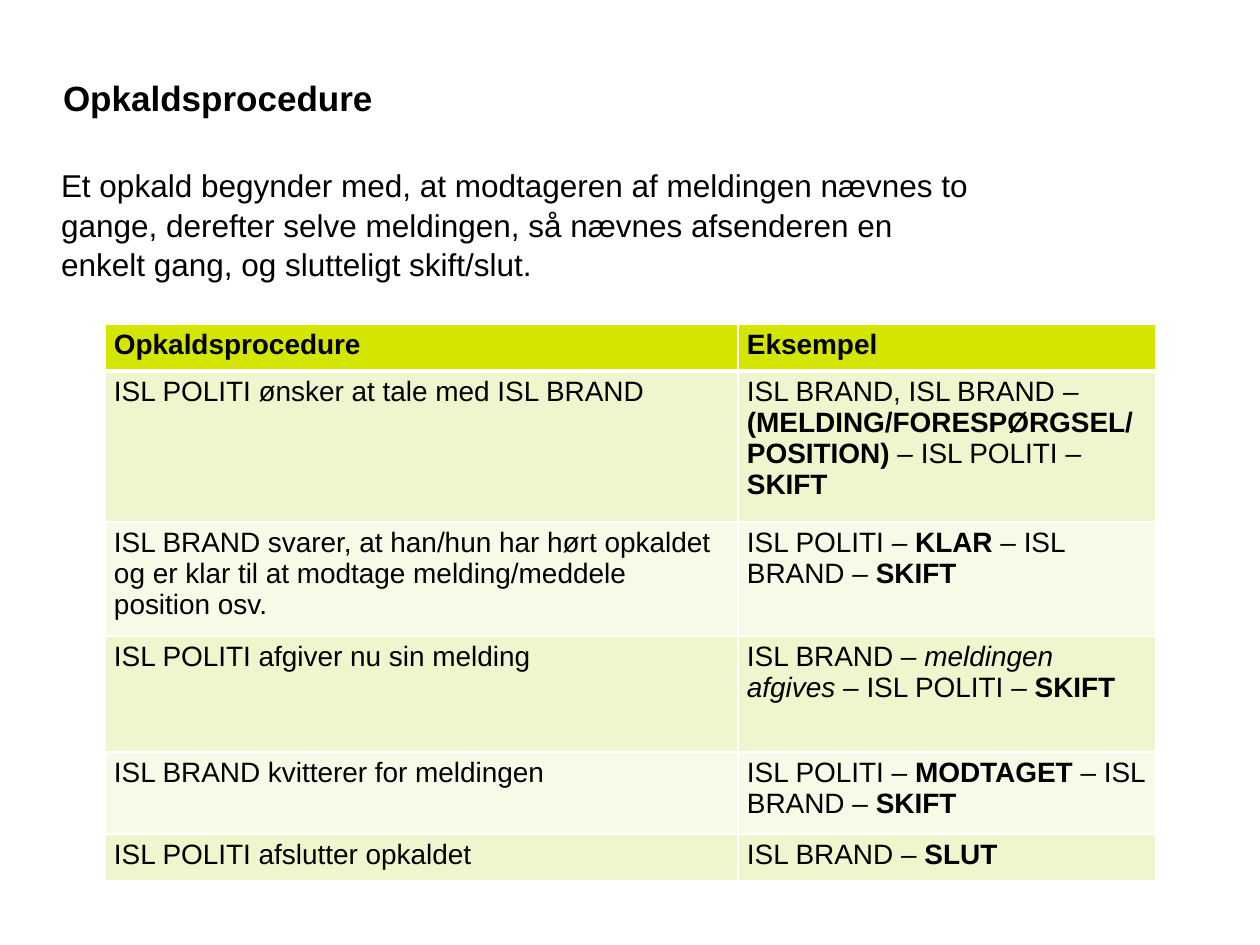
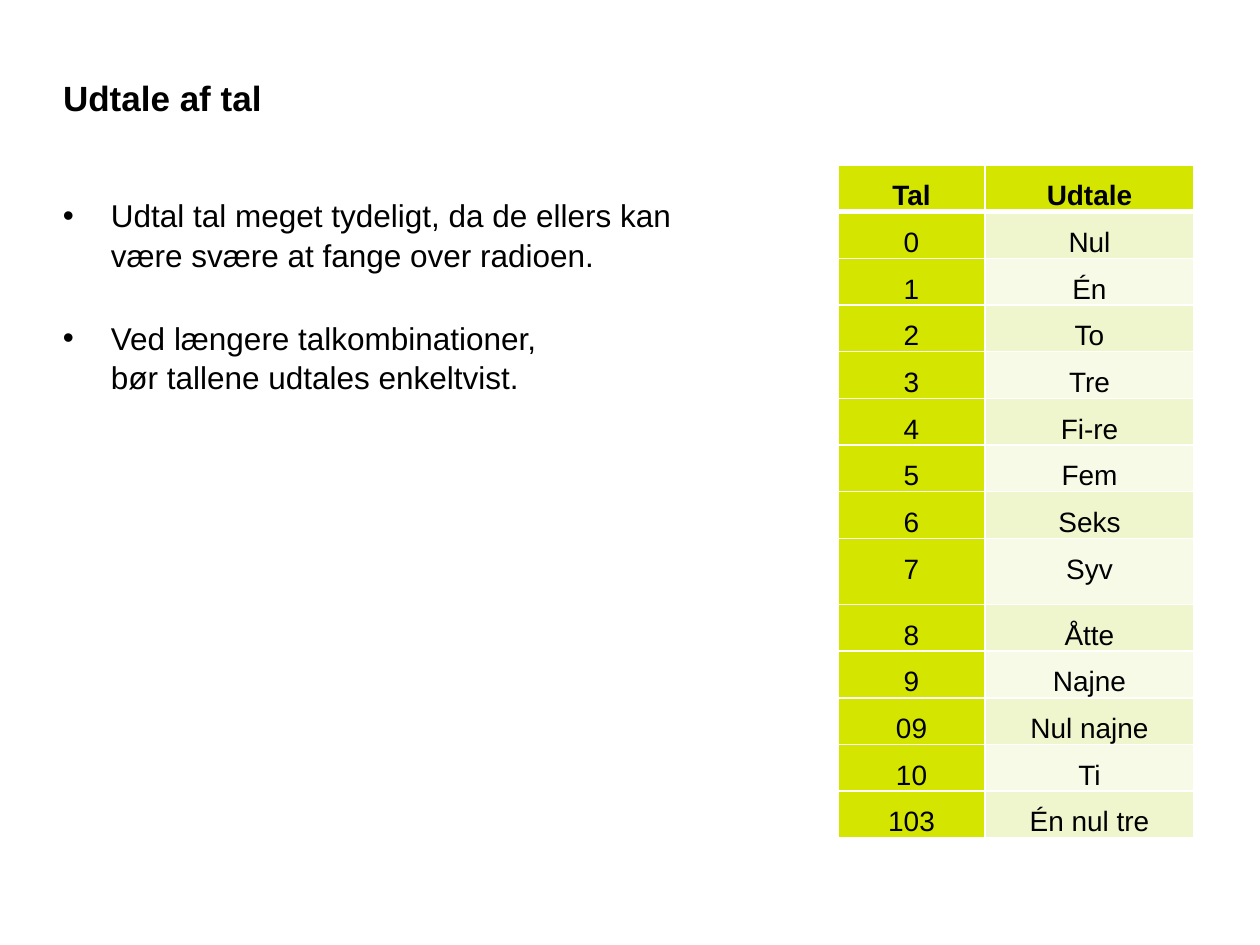
import dataclasses

import lxml.etree
import pptx
import pptx.dml.color
import pptx.enum.text
import pptx.oxml.ns
import pptx.util

ALIGN = pptx.enum.text.PP_ALIGN
SLIDE_W, SLIDE_H = 1260, 945
EMU_PER_PX = 914400 / 126


@dataclasses.dataclass(frozen=True)
class Theme:
    font: str = "Arial"
    ink: str = "000000"
    accent: str = "D4E600"
    band_dark: str = "EFF5CC"
    band_light: str = "F7FAE7"
    border: str = "FFFFFF"
    title_pt: int = 20
    body_pt: int = 18
    table_pt: int = 16
    border_pt: int = 1
    header_border_pt: int = 3
    body_spacing: float = 1.04
    bullet_gap_pt: int = 25


@dataclasses.dataclass(frozen=True)
class Box:
    left: int
    top: int
    width: int
    height: int


@dataclasses.dataclass(frozen=True)
class TableSpec:
    left: int
    top: int
    columns: list[int]
    row_heights: list[int]
    rows: list[tuple[str, str]]
    margin_x: int
    margin_y: int
    align: ALIGN = ALIGN.LEFT
    line_spacing: float = 1.0
    accent_first_column: bool = False


THEME = Theme()
TITLE_BOX = Box(63, 76, 915, 110)
BULLET_INDENT = 48

CALL_INTRO = (
    "Et opkald begynder med, at modtageren af meldingen nævnes to gange, derefter "
    "selve meldingen, så nævnes afsenderen en enkelt gang, og slutteligt skift/slut."
)
NUMBER_ADVICE = [
    "Udtal tal meget tydeligt, da de ellers kan\nvære svære at fange over radioen.",
    "Ved længere talkombinationer,\nbør tallene udtales enkeltvist.",
]
CALL_TABLE = TableSpec(
    left=105, top=324, columns=[633, 418],
    row_heights=[47, 151, 114, 116, 82, 47],
    rows=[
        ("Opkaldsprocedure", "Eksempel"),
        ("ISL POLITI ønsker at tale med ISL BRAND",
         "ISL BRAND, ISL BRAND _– _*(MELDING/FORESPØRGSEL/POSITION) *_– _"
         "ISL POLITI _– _*SKIFT*"),
        ("ISL BRAND svarer, at han/hun har hørt opkaldet og er klar til at modtage "
         "melding/meddele position osv.",
         "ISL POLITI _– _*KLAR *_– _ISL BRAND _– _*SKIFT*"),
        ("ISL POLITI afgiver nu sin melding",
         "ISL BRAND – _meldingen afgives – _ISL POLITI _– _*SKIFT*"),
        ("ISL BRAND kvitterer for meldingen",
         "ISL POLITI – *MODTAGET *_– _ISL BRAND _– _*SKIFT*"),
        ("ISL POLITI afslutter opkaldet", "ISL BRAND _– _*SLUT*"),
    ],
    margin_x=9, margin_y=5,
)
NUMBER_TABLE = TableSpec(
    left=838, top=165, columns=[147, 209],
    row_heights=[45] * 8 + [66] + [45] * 5,
    rows=[
        ("Tal", "Udtale"), ("0", "Nul"), ("1", "Én"), ("2", "To"), ("3", "Tre"),
        ("4", "Fi-re"), ("5", "Fem"), ("6", "Seks"), ("7", "Syv"), ("8", "Åtte"),
        ("9", "Najne"), ("09", "Nul najne"), ("10", "Ti"), ("103", "Én nul tre"),
    ],
    margin_x=8, margin_y=0, align=ALIGN.CENTER, line_spacing=1.5,
    accent_first_column=True,
)


def px(length: int) -> pptx.util.Emu:
    return pptx.util.Emu(round(length * EMU_PER_PX))


def rgb(color: str) -> pptx.dml.color.RGBColor:
    return pptx.dml.color.RGBColor.from_string(color)


def add_element(parent, tag: str, **attributes: str):
    return lxml.etree.SubElement(parent, pptx.oxml.ns.qn(tag), attributes)


def add_bullet(p) -> None:
    pPr = p._p.get_or_add_pPr()
    pPr.set("marL", str(px(BULLET_INDENT)))
    pPr.set("indent", str(-px(BULLET_INDENT)))
    add_element(pPr, "a:buFont", typeface=THEME.font)
    add_element(pPr, "a:buChar", char="•")


def write_text(p, text: str, *, size: int, bold: bool = False, align: ALIGN = ALIGN.LEFT,
               line_spacing: float = 1.0, space_before: int = 0,
               bullet: bool = False) -> None:
    """Fill a paragraph; *stars* mark bold, _underscores_ italic, newlines a break."""
    p.alignment = align
    p.line_spacing = line_spacing
    p.space_before = pptx.util.Pt(space_before)
    if bullet:
        add_bullet(p)
    for line_no, line in enumerate(text.split("\n")):
        if line_no:
            p.add_line_break()
        for i, part in enumerate(line.split("*")):
            for j, piece in enumerate(part.split("_")):
                if not piece:
                    continue
                r = p.add_run()
                r.text = piece
                r.font.name = THEME.font
                r.font.size = pptx.util.Pt(size)
                r.font.color.rgb = rgb(THEME.ink)
                r.font.bold = bold or i % 2 == 1
                r.font.italic = j % 2 == 1


def prepare_frame(sp):
    tf = sp.text_frame
    tf.word_wrap = True
    tf.auto_size = pptx.enum.text.MSO_AUTO_SIZE.NONE
    tf.vertical_anchor = pptx.enum.text.MSO_ANCHOR.TOP
    tf.margin_left = tf.margin_top = tf.margin_right = tf.margin_bottom = 0
    return tf


def add_titled_slide(prs, title: str):
    slide = prs.slides.add_slide(prs.slide_layouts[5])
    sp = slide.shapes.title
    sp.left, sp.top = px(TITLE_BOX.left), px(TITLE_BOX.top)
    sp.width, sp.height = px(TITLE_BOX.width), px(TITLE_BOX.height)
    write_text(prepare_frame(sp).paragraphs[0], title, size=THEME.title_pt, bold=True)
    return slide


def add_body(slide, box: Box, paragraphs: list[str], bullet: bool = False) -> None:
    sp = slide.shapes.add_textbox(px(box.left), px(box.top), px(box.width), px(box.height))
    tf = prepare_frame(sp)
    for i, text in enumerate(paragraphs):
        p = tf.add_paragraph() if i else tf.paragraphs[0]
        write_text(p, text, size=THEME.body_pt, line_spacing=THEME.body_spacing,
                   space_before=THEME.bullet_gap_pt if i else 0, bullet=bullet)


def set_borders(cell, row_no: int) -> None:
    """Draw white cell edges, thicker where the header meets the first row."""
    thick_edge = {0: "a:lnB", 1: "a:lnT"}.get(row_no)
    tcPr = cell._tc.get_or_add_tcPr()
    for tag in ("a:lnL", "a:lnR", "a:lnT", "a:lnB"):
        width = THEME.header_border_pt if tag == thick_edge else THEME.border_pt
        ln = add_element(tcPr, tag, w=str(pptx.util.Pt(width)))
        add_element(add_element(ln, "a:solidFill"), "a:srgbClr", val=THEME.border)


def cell_fill(spec: TableSpec, row_no: int, column_no: int) -> str:
    if row_no == 0 or (spec.accent_first_column and column_no == 0):
        return THEME.accent
    return THEME.band_dark if row_no % 2 else THEME.band_light


def add_table(slide, spec: TableSpec) -> None:
    table = slide.shapes.add_table(
        len(spec.rows), len(spec.columns), px(spec.left), px(spec.top),
        px(sum(spec.columns)), px(sum(spec.row_heights))).table
    for column, width in zip(table.columns, spec.columns):
        column.width = px(width)
    for row_no, (texts, height) in enumerate(zip(spec.rows, spec.row_heights)):
        table.rows[row_no].height = px(height)
        for column_no, text in enumerate(texts):
            cell = table.cell(row_no, column_no)
            cell.margin_left = cell.margin_right = px(spec.margin_x)
            cell.margin_top = cell.margin_bottom = px(spec.margin_y)
            set_borders(cell, row_no)
            cell.fill.solid()
            cell.fill.fore_color.rgb = rgb(cell_fill(spec, row_no, column_no))
            write_text(cell.text_frame.paragraphs[0], text, size=THEME.table_pt,
                       bold=row_no == 0, align=spec.align,
                       line_spacing=spec.line_spacing)


def main() -> None:
    prs = pptx.Presentation()
    prs.slide_width, prs.slide_height = px(SLIDE_W), px(SLIDE_H)

    slide = add_titled_slide(prs, "Opkaldsprocedure")
    add_body(slide, Box(61, 165, 915, 649), [CALL_INTRO])
    add_table(slide, CALL_TABLE)

    slide = add_titled_slide(prs, "Udtale af tal")
    add_body(slide, Box(63, 195, 984, 110), NUMBER_ADVICE, bullet=True)
    add_table(slide, NUMBER_TABLE)

    prs.save("out.pptx")


if __name__ == "__main__":
    main()
